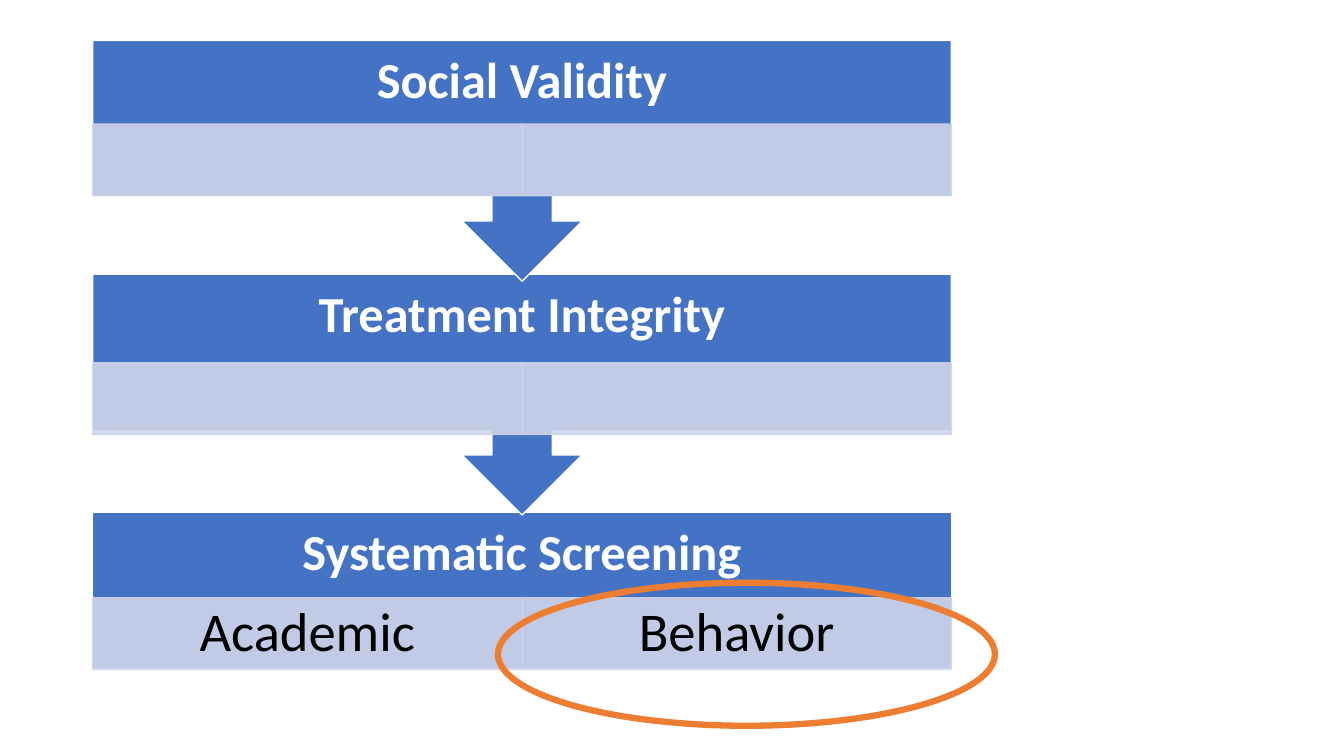
from lxml.etree import SubElement
from pptx import Presentation
from pptx.dml.color import RGBColor
from pptx.enum.shapes import MSO_SHAPE
from pptx.enum.text import MSO_ANCHOR, PP_ALIGN
from pptx.oxml.ns import qn
from pptx.util import Pt

BLUE = RGBColor(0x44, 0x72, 0xC4)
PALE = RGBColor(0xCF, 0xD5, 0xEA)
ORANGE = RGBColor(0xED, 0x7D, 0x31)
WHITE = RGBColor(0xFF, 0xFF, 0xFF)
BLACK = RGBColor(0, 0, 0)

LEFT, WIDE = 66.2, 613.4
HALF = WIDE / 2
HEAD, CELL = 60.5, 51.1
STEPS = [
    ("Systematic Screening", 365.8, 427, ("Academic", "Behavior")),
    ("Treatment Integrity", 195.8, 259.2, ("", "")),
    ("Social Validity", 28.8, 88.6, ("", "")),
]


def add_form(slide, kind, box, fill, line, width=1):
    """Add a preset shape with its fill and outline."""
    form = slide.shapes.add_shape(kind, *map(Pt, box))
    form.shadow.inherit = False
    if fill is None:
        form.fill.background()
    else:
        form.fill.solid()
        form.fill.fore_color.rgb = fill
    form.line.color.rgb = line
    form.line.width = Pt(width)
    return form


def set_text(shape, text, size, color, bold=False, side=20, edge=20):
    """Write one centred line of text into a shape."""
    frame = shape.text_frame
    frame.word_wrap = True
    frame.vertical_anchor = MSO_ANCHOR.MIDDLE
    frame.margin_left = frame.margin_right = Pt(side)
    frame.margin_top = frame.margin_bottom = Pt(edge)
    para = frame.paragraphs[0]
    para.alignment = PP_ALIGN.CENTER
    para.line_spacing = 0.9
    run = para.add_run()
    run.text = text
    run.font.name = "Calibri"
    run.font.size = Pt(size)
    run.font.bold = bold
    run.font.color.rgb = color


def add_head(slide, text, top, last):
    """Add a heading block, with a down arrow unless it is the last."""
    if last:
        add_form(slide, MSO_SHAPE.RECTANGLE, (LEFT, top, WIDE, 111.6), BLUE, WHITE)
    else:
        box = (LEFT, top, WIDE, 172.1)
        form = add_form(slide, MSO_SHAPE.UP_ARROW_CALLOUT, box, BLUE, WHITE)
        form.rotation = 180
    label = slide.shapes.add_textbox(*map(Pt, (LEFT, top, WIDE, HEAD)))
    set_text(label, text, 36, WHITE, bold=True)


def add_cell(slide, text, left, top):
    """Add a pale, slightly clear cell."""
    box = (left, top, HALF, CELL)
    cell = add_form(slide, MSO_SHAPE.RECTANGLE, box, PALE, PALE)
    for color in cell._element.spPr.iter(qn("a:srgbClr")):
        SubElement(color, qn("a:alpha"), val="90000")
    if text:
        set_text(cell, text, 39, BLACK, side=21.6, edge=3.6)


def main():
    """Build the slide and save it."""
    deck = Presentation()
    deck.slide_width, deck.slide_height = Pt(960), Pt(540)
    slide = deck.slides.add_slide(deck.slide_layouts[6])
    for rank, (title, top, row, cells) in enumerate(STEPS):
        add_head(slide, title, top, last=rank == 0)
        for col, text in enumerate(cells):
            add_cell(slide, text, LEFT + col * HALF, row)
    add_form(slide, MSO_SHAPE.OVAL, (355.7, 416.2, 355, 102.2), None, ORANGE, 4.5)
    deck.save("out.pptx")


if __name__ == "__main__":
    main()
